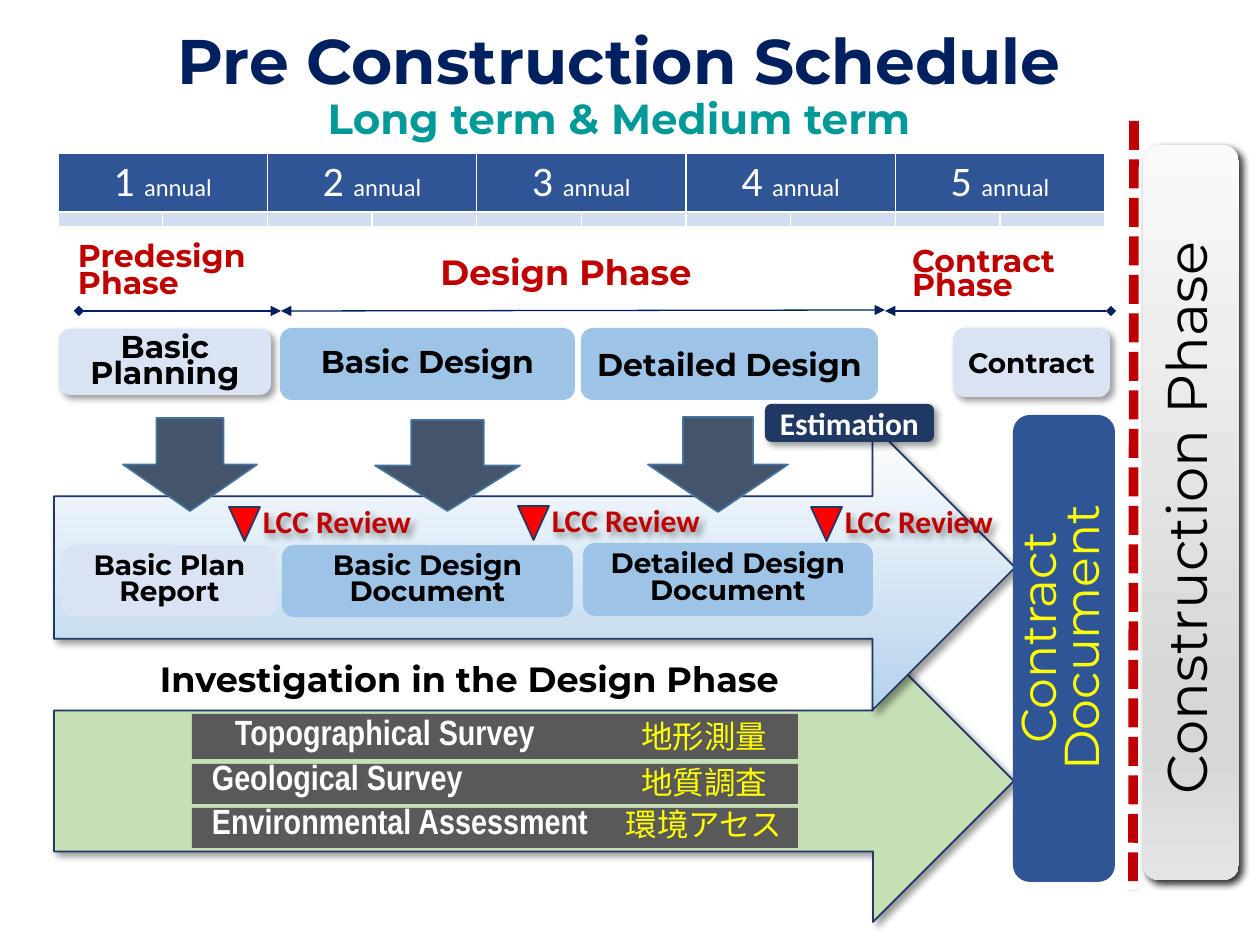
import pptx
import pptx.util
import pptx.dml.color
import pptx.enum.dml
import pptx.enum.shapes
import pptx.enum.text
import pptx.oxml
import pptx.oxml.ns
import lxml.etree

PX = 914400 / 126
MS = pptx.enum.shapes.MSO_SHAPE
ANCHOR = pptx.enum.text.MSO_ANCHOR
ALIGN = pptx.enum.text.PP_ALIGN
NAVY, RED, BLUE, PALE, SKY = "203864", "C00000", "2F5597", "DAE3F3", "9DC3E6"
MONT = "Montserrat"

TITLE = [("Pre Construction Schedule", 36, "002060"),
         ("Long term & Medium term", 24, "009999")]
YEARS = ["1", "2", "3", "4", "5"]
TABLE_BOX = (58, 153, 1047, 74)
TABLE_ROWS = (59, 15)

BIG_ARROWS = [((54, 640, 960, 282), "C5E0B4"),
              ((54, 425, 961, 285), [(0, "FFFFFF"), (100, "B5D2EC")])]
SURVEYS = [("Topographical Survey", 714, 45, 43, "地形測量", 711),
           ("Geological Survey", 764, 40, 20, "地質調査", 757),
           ("Environmental Assessment", 808, 40, 20, "環境アセス", 799)]
PANELS = [((1143, 145, 96, 735),
           [(0, "FAFAFA"), (74, "D7D7D7"), (83, "D7D7D7"), (100, "E4E4E4")], 80),
          ((1013, 415, 102, 467), BLUE, 0)]
# text, box, fill, shadow opacity, size, line spacing, insets
BOXES = [("Basic Planning", (59, 329, 212, 66), PALE, 40, 18, 15, (0, 10, 0, 5)),
         ("Basic Design", (280, 328, 295, 72), SKY, 0, 18, 15, (0, 5, 0, 0)),
         ("Detailed Design", (581, 328, 297, 72), SKY, 0, 18, None, (9, 5, 9, 5)),
         ("Contract", (953, 328, 157, 69), PALE, 40, 16, None, (0, 5, 0, 5)),
         ("Basic Plan Report", (63, 545, 213, 72), PALE, 0, 16, 15, (9, 5, 9, 5)),
         ("Basic Design Document", (282, 545, 291, 72), SKY, 0, 16, 15, (0, 5, 0, 5)),
         ("Detailed Design Document", (583, 543, 290, 73), SKY, 0, 16, 15, (9, 5, 9, 5))]
DOWN_ARROWS = [(123, 418, 134, 93), (375, 420, 145, 91), (648, 417, 140, 95)]
REVIEWS = [(229, 507), (518, 506), (811, 507)]
LABELS = [("Predesign Phase", (66, 242, 205, 66), 18, RED, True, 15, ALIGN.LEFT, 6),
          ("Design Phase", (391, 244, 350, 55), 20, RED, True, None, ALIGN.CENTER, 6),
          ("Contract Phase", (900, 249, 193, 57), 18, RED, True, 14, ALIGN.LEFT, 5)]
SIDEWAYS = [("Construction Phase", (854, 436, 662, 81), 32, "000000", None, ALIGN.LEFT),
            ("Contract Document", (892, 587, 348, 101), 28, "FFFF00", 25, ALIGN.CENTER)]
LINES = [((1134, 121), (1133, 891), RED, 5.5, None, None),
         ((79, 311), (281, 311), "002060", 1, "diamond", "triangle"),
         ((281, 311), (885, 310), "002060", 0.75, "triangle", "triangle"),
         ((1111, 311), (885, 311), "002060", 1, "diamond", "triangle")]


def px(n):
    return round(n * PX)


def rgb(h):
    return pptx.dml.color.RGBColor.from_string(h)


def sub(parent, tag, **attrs):
    return lxml.etree.SubElement(parent, pptx.oxml.ns.qn("a:" + tag), attrs)


def paint(sp, fill):
    if fill is None:
        sp.fill.background()
    elif isinstance(fill, str):
        sp.fill.solid()
        sp.fill.fore_color.rgb = rgb(fill)
    else:
        sp.fill.gradient()
        sp.fill.gradient_angle = 270
        stops = sp._element.spPr.find(".//" + pptx.oxml.ns.qn("a:gsLst"))
        for gs in list(stops):
            stops.remove(gs)
        for pos, color in fill:
            sub(sub(stops, "gs", pos=str(pos * 1000)), "srgbClr", val=color)


def add_shape(kind, box, fill, line=None, shadow=0):
    sp = slide.shapes.add_shape(kind, *map(px, box))
    paint(sp, fill)
    if line:
        sp.line.color.rgb = rgb(line)
        sp.line.width = pptx.util.Pt(1)
    else:
        sp.line.fill.background()
    sp.shadow.inherit = False
    if shadow:
        effects = sp._element.spPr.find(pptx.oxml.ns.qn("a:effectLst"))
        outer = sub(effects, "outerShdw", blurRad="50800", dist="38100", dir="2700000",
                    algn="tl", rotWithShape="0")
        sub(sub(outer, "srgbClr", val="000000"), "alpha", val=str(shadow * 1000))
    return sp


def style(p, size, color, bold=False, name=MONT, align=ALIGN.CENTER, spacing=None):
    p.alignment = align
    if spacing:
        p.line_spacing = spacing
    f = p.font
    f.size, f.bold, f.name = pptx.util.Pt(size), bold, name
    f.color.rgb = rgb(color)


def write(sp, text, size, color, insets=(13, 6, 13, 6), anchor=ANCHOR.MIDDLE,
          wrap=True, **look):
    tf = sp.text_frame
    tf.word_wrap, tf.vertical_anchor = wrap, anchor
    tf.margin_left, tf.margin_top, tf.margin_right, tf.margin_bottom = map(px, insets)
    tf.text = text
    style(tf.paragraphs[0], size, color, **look)


def add_text(box, *args, **look):
    sp = slide.shapes.add_textbox(*map(px, box))
    write(sp, *args, **look)
    return sp


def points(n):
    return pptx.util.Pt(n) if n else None


def format_cell(cell, color, bottom):
    cell.margin_left = cell.margin_right = px(9)
    cell.margin_top = cell.margin_bottom = 0
    cell.vertical_anchor = ANCHOR.MIDDLE
    tcPr = cell._tc.get_or_add_tcPr()
    for side, width in (("lnL", 1), ("lnR", 1), ("lnT", 1), ("lnB", bottom)):
        ln = sub(tcPr, side, w=str(pptx.util.Pt(width)))
        sub(sub(ln, "solidFill"), "srgbClr", val="FFFFFF")
    cell.fill.solid()
    cell.fill.fore_color.rgb = rgb(color)


def add_years():
    table = slide.shapes.add_table(2, 2 * len(YEARS), *map(px, TABLE_BOX)).table
    for col in table.columns:
        col.width = px(TABLE_BOX[2] / (2 * len(YEARS)))
    for row, height in zip(table.rows, TABLE_ROWS):
        row.height = px(height)
    for c in range(2 * len(YEARS)):
        format_cell(table.cell(0, c), BLUE, 1)
        format_cell(table.cell(1, c), "D2DEEF", 1)
        style(table.cell(1, c).text_frame.paragraphs[0], 4, "000000")
        table.cell(1, c)._tc.txBody.p_lst[0].get_or_add_endParaRPr().set("sz", "400")
    for i, year in enumerate(YEARS):
        cell = table.cell(0, 2 * i)
        cell.merge(table.cell(0, 2 * i + 1))
        p = cell.text_frame.paragraphs[0]
        style(p, 24, "FFFFFF", name="Calibri")
        for text, size in ((year + " ", 24), ("annual", 14)):
            r = p.add_run()
            r.text, r.font.size = text, pptx.util.Pt(size)


def add_line(start, end, color, width, head, tail):
    cn = slide.shapes.add_connector(pptx.enum.shapes.MSO_CONNECTOR.STRAIGHT,
                                    *map(px, start + end))
    cn.line.color.rgb = rgb(color)
    cn.line.width = pptx.util.Pt(width)
    if head:
        ln = cn.line._get_or_add_ln()
        sub(ln, "headEnd", type=head)
        sub(ln, "tailEnd", type=tail)
    else:
        cn.line.dash_style = pptx.enum.dml.MSO_LINE.SQUARE_DOT
    sub(cn._element.spPr, "effectLst")


prs = pptx.Presentation()
prs.slide_width, prs.slide_height = px(1260), px(945)
slide = prs.slides.add_slide(prs.slide_layouts[5])

title = slide.shapes.title
title.left, title.top, title.width, title.height = map(px, (79, 24, 1080, 125))
tf = title.text_frame
tf.auto_size, tf.vertical_anchor = pptx.enum.text.MSO_AUTO_SIZE.NONE, ANCHOR.MIDDLE
tf.text = "\n".join(text for text, _, _ in TITLE)
for p, (_, size, color) in zip(tf.paragraphs, TITLE):
    style(p, size, color, bold=True, spacing=0.9)

add_years()
for box, fill in BIG_ARROWS:
    add_shape(MS.RIGHT_ARROW, box, fill, NAVY, 40)
for text, top, height, inset, japanese, label_top in SURVEYS:
    sp = add_shape(MS.RECTANGLE, (192, top, 606, height), "595959")
    write(sp, text, 20, "FFFFFF", (inset, 6, 0, 6), ANCHOR.BOTTOM, bold=True,
          name="Arial Narrow", align=ALIGN.LEFT, spacing=0.9)
    sp = add_text((605, label_top, 198, 50), japanese, 18, "FFFF00",
                  anchor=ANCHOR.TOP, name="Noto Sans CJK JP")
    sub(sp.text_frame.paragraphs[0].font._rPr, "ea", typeface="Noto Sans CJK JP")
for box, fill, shadow in PANELS:
    add_shape(MS.ROUNDED_RECTANGLE, box, fill, shadow=shadow)
for text, box, fill, shadow, size, spacing, insets in BOXES:
    sp = add_shape(MS.ROUNDED_RECTANGLE, box, fill, shadow=shadow)
    write(sp, text, size, "000000", insets, bold=True, spacing=points(spacing))
for box in DOWN_ARROWS:
    add_shape(MS.DOWN_ARROW, box, "44546A", "43739E")
sp = add_shape(MS.ROUNDED_RECTANGLE, (765, 404, 169, 38), NAVY, shadow=40)
write(sp, "Estimation", 18, "FFFFFF", (9, 5, 9, 5), bold=True, name="Calibri")
for left, top in REVIEWS:
    sp = add_shape(MS.ROUNDED_RECTANGLE, (left + 26, top, 164, 28), None, shadow=40)
    write(sp, "LCC Review", 18, RED, (0, 0, 0, 0), bold=True, name="Calibri")
    add_shape(MS.ISOSCELES_TRIANGLE, (left, top, 31, 34), "FF0000", NAVY).rotation = 180
for text, box, size, color, bold, spacing, align, top in LABELS:
    add_text(box, text, size, color, (12, top, 12, 0), ANCHOR.TOP, bold=bold,
             align=align, spacing=points(spacing))
add_text((147, 651, 707, 55), "Investigation in the Design Phase", 20, "000000",
         anchor=ANCHOR.TOP, wrap=False, bold=True, align=ALIGN.LEFT)
for text, box, size, color, spacing, align in SIDEWAYS:
    add_text(box, text, size, color, align=align, spacing=points(spacing)).rotation = 270
for line in LINES:
    add_line(*line)

prs.save("out.pptx")
